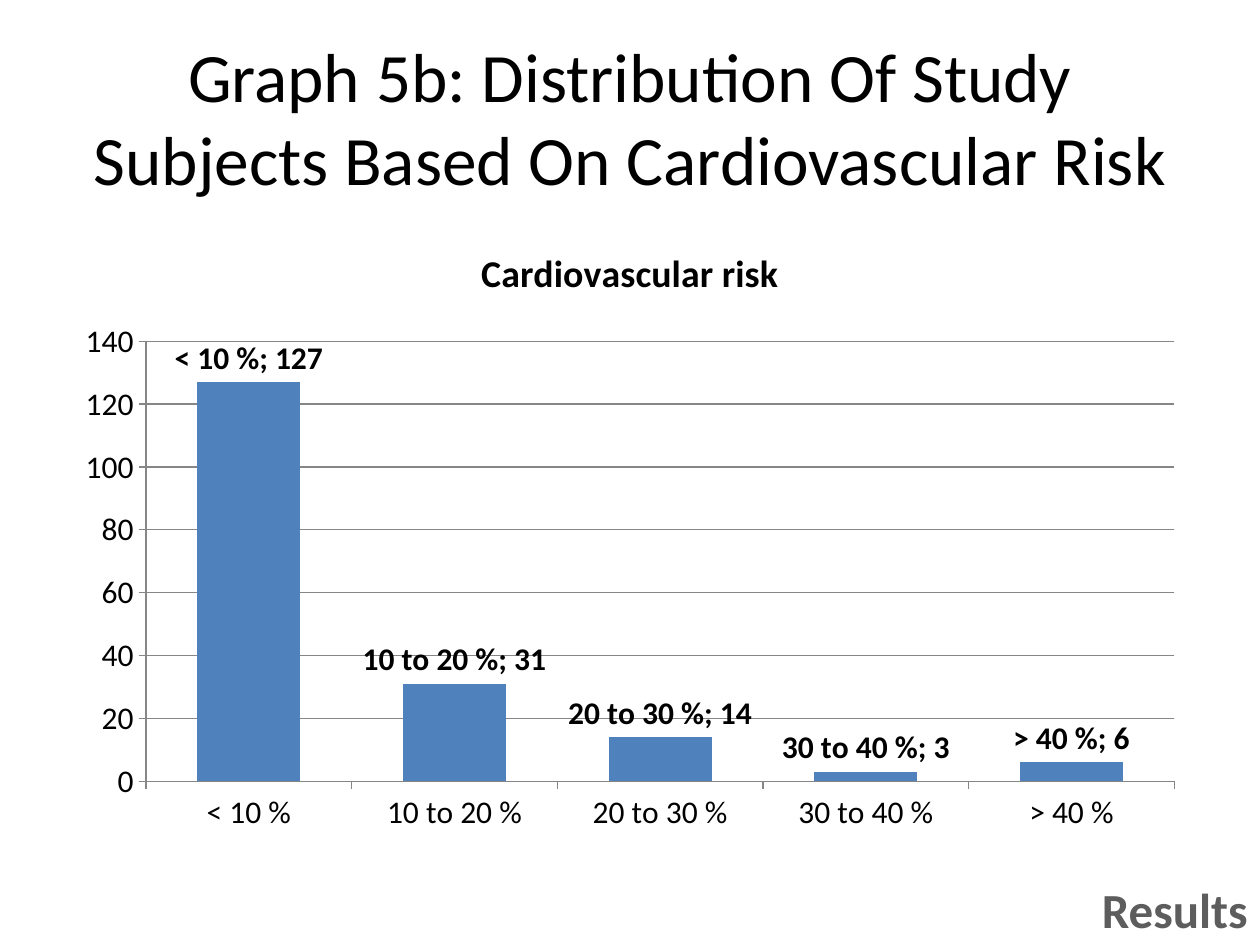
from dataclasses import dataclass

import pptx
import pptx.chart.data
import pptx.dml.color
import pptx.enum.chart
import pptx.enum.text
import pptx.util
from pptx.util import Inches

BLACK = pptx.dml.color.RGBColor(0x00, 0x00, 0x00)
GRAY = pptx.dml.color.RGBColor(0x5D, 0x5D, 0x5D)
LINE = pptx.dml.color.RGBColor(0x86, 0x86, 0x86)
BLUE = pptx.dml.color.RGBColor(0x4F, 0x81, 0xBD)


@dataclass
class Box:
    left: float
    top: float
    width: float
    height: float

    def lengths(self) -> tuple:
        return tuple(Inches(v) for v in (self.left, self.top, self.width, self.height))


@dataclass
class RiskGroup:
    label: str
    subjects: int


TITLE_BOX = Box(0.5, 0.3, 9, 1.25)
CHART_BOX = Box(0.5, 1.75, 9, 4.95)
SECTION_BOX = Box(0, 6.93, 10, 0.57)
GROUPS = [
    RiskGroup("< 10 %", 127),
    RiskGroup("10 to 20 %", 31),
    RiskGroup("20 to 30 %", 14),
    RiskGroup("30 to 40 %", 3),
    RiskGroup("> 40 %", 6),
]


def set_font(font, size: float, color=BLACK, bold: bool = False) -> None:
    font.name = "Calibri"
    font.size = pptx.util.Pt(size)
    font.bold = bold
    font.color.rgb = color


def write(tf, text: str, align, size: float, color=BLACK, bold: bool = False) -> None:
    tf.text = text
    tf.word_wrap = True
    p = tf.paragraphs[0]
    p.alignment = align
    set_font(p.runs[0].font, size, color, bold)


def add_title(s) -> None:
    sp = s.shapes.title
    sp.left, sp.top, sp.width, sp.height = TITLE_BOX.lengths()
    tf = sp.text_frame
    tf.vertical_anchor = pptx.enum.text.MSO_ANCHOR.MIDDLE
    write(tf, "Graph 5b: Distribution Of Study Subjects Based On Cardiovascular Risk",
          pptx.enum.text.PP_ALIGN.CENTER, 39.6)
    tf.auto_size = pptx.enum.text.MSO_AUTO_SIZE.NONE


def add_risk_chart(s) -> None:
    data = pptx.chart.data.CategoryChartData()
    data.categories = [g.label for g in GROUPS]
    data.add_series("Series 1", [g.subjects for g in GROUPS])
    chart = s.shapes.add_chart(
        pptx.enum.chart.XL_CHART_TYPE.COLUMN_CLUSTERED, *CHART_BOX.lengths(), data).chart
    set_font(chart.font, 18)
    chart.has_legend = False
    chart.has_title = True
    tf = chart.chart_title.text_frame
    tf.text = "Cardiovascular risk"
    set_font(tf.paragraphs[0].runs[0].font, 21.6, bold=True)
    chart.chart_title.include_in_layout = False

    for axis in (chart.category_axis, chart.value_axis):
        axis.major_tick_mark = pptx.enum.chart.XL_TICK_MARK.OUTSIDE
        axis.minor_tick_mark = pptx.enum.chart.XL_TICK_MARK.NONE
        axis.format.line.color.rgb = LINE
        axis.format.line.width = pptx.util.Pt(0.75)
    chart.value_axis.minimum_scale = 0
    chart.value_axis.maximum_scale = 140
    chart.value_axis.major_unit = 20
    grid = chart.value_axis.major_gridlines.format.line
    grid.color.rgb = LINE
    grid.width = pptx.util.Pt(0.75)

    plot = chart.plots[0]
    plot.gap_width = 100
    plot.vary_by_categories = False
    fill = plot.series[0].format.fill
    fill.solid()
    fill.fore_color.rgb = BLUE
    labels = plot.series[0].data_labels
    labels.show_value = True
    labels.show_category_name = True
    labels.position = pptx.enum.chart.XL_LABEL_POSITION.OUTSIDE_END
    set_font(labels.font, 18, bold=True)


def add_section_label(s) -> None:
    tf = s.shapes.add_textbox(*SECTION_BOX.lengths()).text_frame
    write(tf, "Results", pptx.enum.text.PP_ALIGN.RIGHT, 28, GRAY, True)
    tf.auto_size = pptx.enum.text.MSO_AUTO_SIZE.SHAPE_TO_FIT_TEXT


def main() -> None:
    prs = pptx.Presentation()
    prs.slide_width = Inches(10)
    prs.slide_height = Inches(7.5)
    s = prs.slides.add_slide(prs.slide_layouts[5])
    add_title(s)
    add_risk_chart(s)
    add_section_label(s)
    prs.save("out.pptx")


if __name__ == "__main__":
    main()
